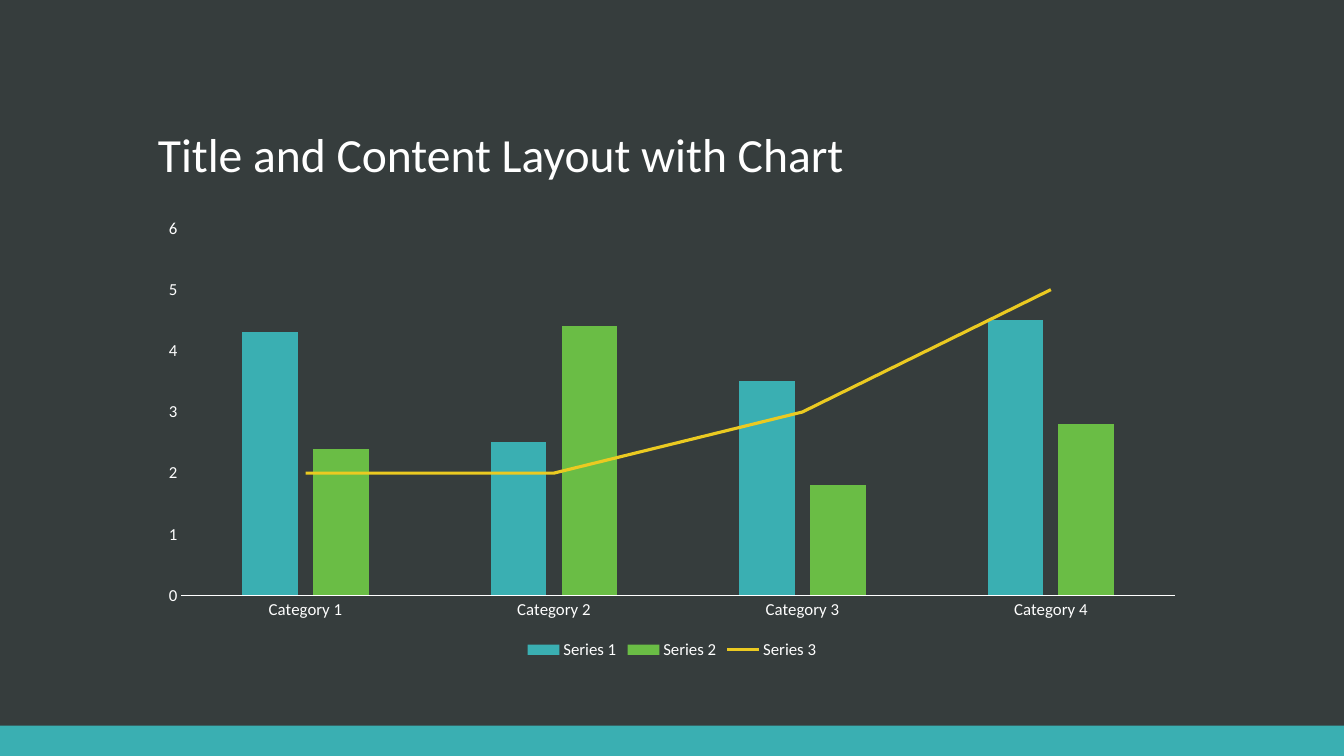
"""Build a title slide with a combined column and line chart."""
from copy import deepcopy
from dataclasses import dataclass

from lxml.etree import SubElement
from pptx import Presentation
from pptx.chart.chart import Chart
from pptx.chart.data import CategoryChartData
from pptx.dml.color import RGBColor
from pptx.dml.fill import FillFormat
from pptx.enum.chart import XL_CHART_TYPE, XL_LEGEND_POSITION, XL_MARKER_STYLE, XL_TICK_MARK
from pptx.enum.shapes import MSO_SHAPE
from pptx.enum.text import MSO_ANCHOR, MSO_AUTO_SIZE, PP_ALIGN
from pptx.oxml.ns import qn
from pptx.slide import Slide
from pptx.text.text import Font
from pptx.util import Inches, Pt

W, H = Inches(13.33), Inches(7.5)
FONT = "Calibri"
WHITE, TEAL, GREEN, YELLOW, SLATE = "FFFFFF", "3AAFB2", "6ABD45", "EBCA21", "363D3D"


@dataclass(frozen=True)
class Box:
    """Hold a rectangle as shares of the slide's size."""
    x: float
    y: float
    w: float
    h: float

    def emu(self) -> tuple[int, int, int, int]:
        """Return left, top, width and height in EMU."""
        return int(self.x * W), int(self.y * H), int(self.w * W), int(self.h * H)


@dataclass(frozen=True)
class Series:
    """Describe one chart series."""
    name: str
    values: tuple[float, ...]
    color: str


CATEGORIES = [f"Category {n}" for n in range(1, 5)]
COLUMNS = [
    Series("Series 1", (4.3, 2.5, 3.5, 4.5), TEAL),
    Series("Series 2", (2.4, 4.4, 1.8, 2.8), GREEN),
]
TREND = Series("Series 3", (2, 2, 3, 5), YELLOW)
FOOTER_BOX = Box(0, 0.96, 1, 0.04)
TITLE_BOX = Box(0.11, 0.068, 0.78, 0.18)
CHART_BOX = Box(0.11, 0.277, 0.78, 0.601)


def rgb(color: str) -> RGBColor:
    """Turn a hex string into a colour."""
    return RGBColor.from_string(color)


def paint(fill: FillFormat, color: str) -> None:
    """Apply a solid fill."""
    fill.solid()
    fill.fore_color.rgb = rgb(color)


def set_font(font: Font, size: float) -> None:
    """Apply the white slide font."""
    font.name, font.size = FONT, Pt(size)
    font.color.rgb = rgb(WHITE)


def add_footer(s: Slide) -> None:
    """Draw the band along the bottom edge."""
    sp = s.shapes.add_shape(MSO_SHAPE.RECTANGLE, *FOOTER_BOX.emu())
    sp.shadow.inherit = False
    paint(sp.fill, TEAL)
    sp.line.fill.background()


def add_title(s: Slide, text: str) -> None:
    """Place and format the title."""
    sp = s.shapes.title
    sp.left, sp.top, sp.width, sp.height = TITLE_BOX.emu()
    tf = sp.text_frame
    tf.text = text
    tf.auto_size = MSO_AUTO_SIZE.NONE
    tf.vertical_anchor = MSO_ANCHOR.BOTTOM
    p = tf.paragraphs[0]
    p.alignment, p.line_spacing = PP_ALIGN.LEFT, 0.9
    set_font(p.font, 34)


def split_trend(chart: Chart) -> None:
    """Move the last column series to a line plot on the same axes."""
    bars = chart.plots[0]._element
    ser = bars.findall(qn("c:ser"))[-1]
    for flag in ser.findall(qn("c:invertIfNegative")):
        ser.remove(flag)
    lines = bars.makeelement(qn("c:lineChart"))
    SubElement(lines, qn("c:grouping")).set("val", "standard")
    SubElement(lines, qn("c:varyColors")).set("val", "0")
    lines.append(ser)
    SubElement(lines, qn("c:marker")).set("val", "1")
    lines.extend(deepcopy(bars.findall(qn("c:axId"))))
    bars.addnext(lines)


def style_axes(chart: Chart) -> None:
    """Format both axes."""
    for axis in (chart.category_axis, chart.value_axis):
        axis.major_tick_mark = axis.minor_tick_mark = XL_TICK_MARK.NONE
        axis.has_major_gridlines = False
        set_font(axis.tick_labels.font, 12)
    line = chart.category_axis.format.line
    line.color.rgb, line.width = rgb(WHITE), Pt(0.75)
    axis = chart.value_axis
    axis.format.line.fill.background()
    axis.minimum_scale, axis.maximum_scale, axis.major_unit = 0, 6, 1


def add_combo_chart(s: Slide) -> None:
    """Add the columns, the trend line and the legend."""
    data = CategoryChartData()
    data.categories = CATEGORIES
    for series in (*COLUMNS, TREND):
        data.add_series(series.name, series.values)
    chart = s.shapes.add_chart(XL_CHART_TYPE.COLUMN_CLUSTERED, *CHART_BOX.emu(), data).chart
    set_font(chart.font, 10)
    chart.has_title = False
    split_trend(chart)
    bars, lines = chart.plots
    bars.gap_width, bars.overlap, bars.vary_by_categories = 219, -27, False
    for series, column in zip(bars.series, COLUMNS):
        paint(series.format.fill, column.color)
    trend = lines.series[0]
    trend.smooth = False
    trend.marker.style = XL_MARKER_STYLE.NONE
    trend.format.line.color.rgb = rgb(TREND.color)
    trend.format.line.width = Pt(2.25)
    style_axes(chart)
    chart.has_legend = True
    chart.legend.position = XL_LEGEND_POSITION.BOTTOM
    chart.legend.include_in_layout = False
    set_font(chart.legend.font, 12)


def main() -> None:
    """Build and save the slide."""
    prs = Presentation()
    prs.slide_width, prs.slide_height = W, H
    s = prs.slides.add_slide(prs.slide_layouts[5])
    paint(s.background.fill, SLATE)
    add_footer(s)
    add_title(s, "Title and Content Layout with Chart")
    add_combo_chart(s)
    prs.save("out.pptx")


if __name__ == "__main__":
    main()
